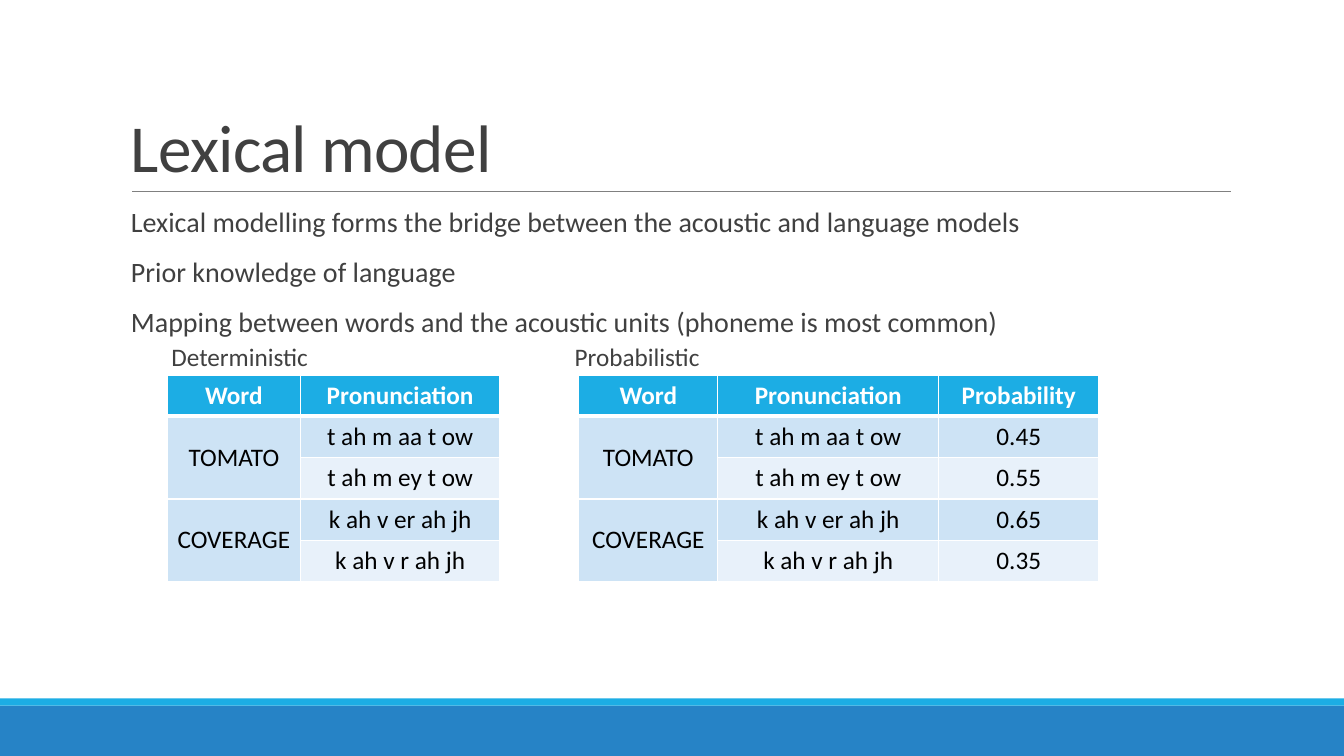
from lxml import etree
from pptx import Presentation
from pptx.dml.color import RGBColor
from pptx.enum.shapes import MSO_CONNECTOR, MSO_SHAPE
from pptx.enum.text import MSO_ANCHOR, PP_ALIGN
from pptx.oxml.ns import qn
from pptx.util import Inches, Pt

LINE, RECTANGLE = MSO_CONNECTOR.STRAIGHT, MSO_SHAPE.RECTANGLE
TOP, MIDDLE, BOTTOM = MSO_ANCHOR.TOP, MSO_ANCHOR.MIDDLE, MSO_ANCHOR.BOTTOM
CENTER = PP_ALIGN.CENTER

WHITE = RGBColor(0xFF, 0xFF, 0xFF)
BLACK = RGBColor(0, 0, 0)
DARK_GREY = RGBColor(0x40, 0x40, 0x40)
RULE_GREY = RGBColor(0x80, 0x80, 0x80)
CYAN = RGBColor(0x1C, 0xAD, 0xE4)
BLUE = RGBColor(0x26, 0x83, 0xC6)
BAND_DARK = RGBColor(0xCD, 0xE3, 0xF5)
BAND_LIGHT = RGBColor(0xE8, 0xF1, 0xFA)

TITLE = "Lexical model"
STATEMENTS = [
    "Lexical modelling forms the bridge between the acoustic and language models",
    "Prior knowledge of language",
    "Mapping between words and the acoustic units (phoneme is most common)",
]
LEXICON = [
    ("TOMATO", [("t ah m aa t ow", "0.45"), ("t ah m ey t ow", "0.55")]),
    ("COVERAGE", [("k ah v er ah jh", "0.65"), ("k ah v r ah jh", "0.35")]),
]
HEADERS = ["Word", "Pronunciation", "Probability"]
# caption, caption left, table left, column widths
MODELS = [
    ("Deterministic", 1.7, 1.66, [1.32, 1.98]),
    ("Probabilistic", 5.7, 5.74, [1.38, 2.19, 1.59]),
]

WIDTH, HEIGHT = 13.33, 7.5
TEXT_LEFT, TEXT_WIDTH = 1.2, 11
RULE_LEFT, RULE_RIGHT, RULE_TOP = 1.31, 12.21, 1.9
CAPTION_TOP, TABLE_TOP, ROW_HEIGHT = 3.42, 3.72, 0.41
BANDS = [(7, 0.5, BLUE), (6.93, 0.07, CYAN)]

TITLE_SPACING = {"line_spacing": 0.85}
BODY_SPACING = {"line_spacing": 0.9, "space_before": Pt(12), "space_after": Pt(2)}
CAPTION_SPACING = {"line_spacing": 0.9}


def set_attributes(target, values):
    for name, value in values.items():
        setattr(target, name, value)


def write(paragraph, text, size, color, bold=False, spacing=None):
    run = paragraph.add_run()
    run.text = text
    set_attributes(run.font, {"name": "Calibri", "size": Pt(size), "bold": bold})
    run.font.color.rgb = color
    set_attributes(paragraph, spacing or {})
    return run


def add_text(slide, box, lines, size, spacing, anchor=TOP, inset=(0.1, 0.05)):
    frame = slide.shapes.add_textbox(*map(Inches, box)).text_frame
    side, edge = map(Inches, inset)
    set_attributes(frame, {
        "word_wrap": True, "vertical_anchor": anchor,
        "margin_left": side, "margin_right": side,
        "margin_top": edge, "margin_bottom": edge,
    })
    for index, line in enumerate(lines):
        paragraph = frame.add_paragraph() if index else frame.paragraphs[0]
        run = write(paragraph, line, size, DARK_GREY, spacing=spacing)
    return run


def add_band(slide, top, height, color):
    band = slide.shapes.add_shape(
        RECTANGLE, 0, Inches(top), Inches(WIDTH), Inches(height))
    band.shadow.inherit = False
    band.fill.solid()
    band.fill.fore_color.rgb = color
    band.line.fill.background()


def add_title_rule(slide):
    rule = slide.shapes.add_connector(
        LINE, *map(Inches, (RULE_LEFT, RULE_TOP, RULE_RIGHT, RULE_TOP)))
    rule.line.color.rgb = RULE_GREY
    rule.line.width = Pt(0.5)
    etree.SubElement(rule.element.spPr, qn("a:effectLst"))


def set_borders(cell, bottom_width):
    """Draw white cell borders, placed before the fill as the schema requires."""
    properties = cell._tc.get_or_add_tcPr()
    widths = {"lnL": 1, "lnR": 1, "lnT": 1, "lnB": bottom_width}
    for position, (side, width) in enumerate(widths.items()):
        line = etree.Element(qn(f"a:{side}"), w=str(Pt(width)))
        fill = etree.SubElement(line, qn("a:solidFill"))
        etree.SubElement(fill, qn("a:srgbClr"), val=str(WHITE))
        properties.insert(position, line)


def add_lexicon_table(slide, left, widths):
    rows = [HEADERS]
    for word, variants in LEXICON:
        rows += [(word if not index else "", *variant)
                 for index, variant in enumerate(variants)]
    table = slide.shapes.add_table(
        len(rows), len(widths), Inches(left), Inches(TABLE_TOP),
        Inches(sum(widths)), Inches(ROW_HEIGHT * len(rows))).table
    for column, width in zip(table.columns, widths):
        column.width = Inches(width)
    for row_index, row in enumerate(rows):
        table.rows[row_index].height = Inches(ROW_HEIGHT)
        header = row_index == 0
        band = BAND_DARK if row_index % 2 else BAND_LIGHT
        for column_index, text in enumerate(row[:len(widths)]):
            cell = table.cell(row_index, column_index)
            cell.vertical_anchor = MIDDLE
            cell.fill.solid()
            body_fill = band if column_index else BAND_DARK
            cell.fill.fore_color.rgb = CYAN if header else body_fill
            set_borders(cell, 3 if header else 1)
            if text:
                write(cell.text_frame.paragraphs[0], text, 18,
                      WHITE if header else BLACK, header, {"alignment": CENTER})
    first = 1
    for _, variants in LEXICON:
        last = first + len(variants) - 1
        table.cell(first, 0).merge(table.cell(last, 0))
        first = last + 1


def main():
    presentation = Presentation()
    presentation.slide_width = Inches(WIDTH)
    presentation.slide_height = Inches(HEIGHT)
    slide = presentation.slides.add_slide(presentation.slide_layouts[6])
    for band in BANDS:
        add_band(slide, *band)
    add_title_rule(slide)
    title = add_text(slide, (TEXT_LEFT, 0.31, TEXT_WIDTH, 1.59), [TITLE], 48,
                     TITLE_SPACING, BOTTOM)
    title.font._element.set("spc", "-50")
    add_text(slide, (TEXT_LEFT, 2.02, TEXT_WIDTH, 1.4), STATEMENTS, 20, BODY_SPACING)
    for caption, caption_left, table_left, widths in MODELS:
        add_text(slide, (caption_left, CAPTION_TOP, 2, TABLE_TOP - CAPTION_TOP),
                 [caption], 18, CAPTION_SPACING, inset=(0, 0))
        add_lexicon_table(slide, table_left, widths)
    presentation.save("out.pptx")


if __name__ == "__main__":
    main()
